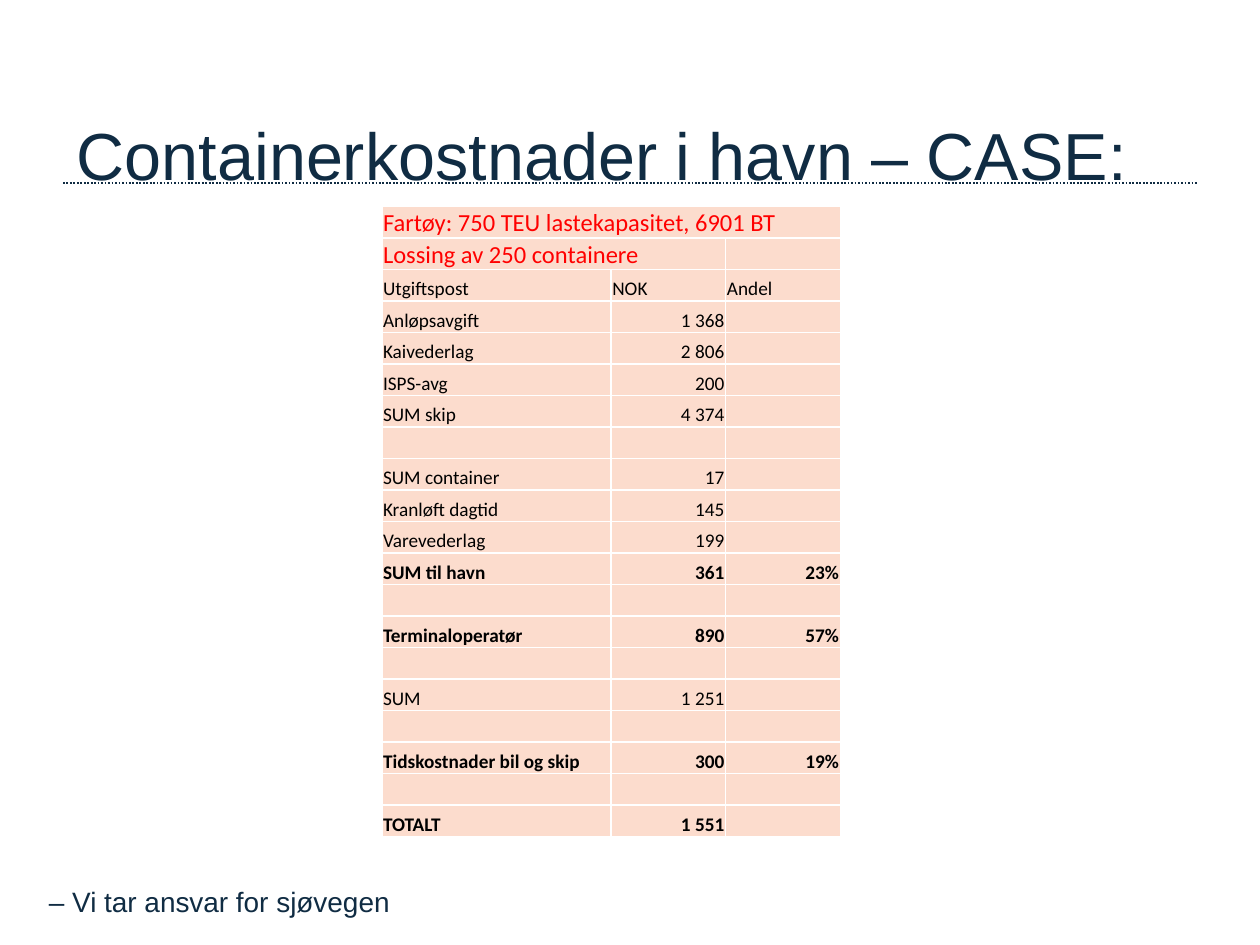
"""Build a slide with the container cost table of a port case."""
from lxml.etree import SubElement
from pptx import Presentation
from pptx.dml.color import RGBColor
from pptx.enum.dml import MSO_LINE
from pptx.enum.shapes import MSO_CONNECTOR
from pptx.enum.text import MSO_ANCHOR, MSO_AUTO_SIZE, PP_ALIGN
from pptx.oxml.ns import qn
from pptx.util import Inches, Pt

COLORS = {"navy": "102C43", "red": "FF0000", "black": "000000", "peach": "FCDCCD"}
HEADS = 2
BOLD = {"SUM til havn", "Terminaloperatør", "Tidskostnader bil og skip", "TOTALT"}
ROWS = [
    ("Fartøy: 750 TEU lastekapasitet, 6901 BT", "", ""),
    ("Lossing av 250 containere", "", ""),
    ("Utgiftspost", "NOK", "Andel"),
    ("Anløpsavgift", "1 368", ""),
    ("Kaivederlag", "2 806", ""),
    ("ISPS-avg", "200", ""),
    ("SUM skip", "4 374", ""),
    ("", "", ""),
    ("SUM container", "17", ""),
    ("Kranløft dagtid", "145", ""),
    ("Varevederlag", "199", ""),
    ("SUM til havn", "361", "23%"),
    ("", "", ""),
    ("Terminaloperatør", "890", "57%"),
    ("", "", ""),
    ("SUM", "1 251", ""),
    ("", "", ""),
    ("Tidskostnader bil og skip", "300", "19%"),
    ("", "", ""),
    ("TOTALT", "1 551", ""),
]


def paint(name):
    """Return the named colour."""
    return RGBColor.from_string(COLORS[name])


def style(para, size, color, face="Arial", bold=False):
    """Format every run of a paragraph."""
    for run in para.runs:
        font = run.font
        font.name, font.size, font.bold = face, Pt(size), bold
        font.color.rgb = paint(color)


def add_title(slide, text):
    """Fill and place the title."""
    title = slide.shapes.title
    title.left, title.top = Inches(0.51), Inches(0.6)
    title.width, title.height = Inches(9.08), Inches(1.25)
    frame = title.text_frame
    frame.text = text
    frame.word_wrap = True
    frame.auto_size = MSO_AUTO_SIZE.NONE
    frame.vertical_anchor = MSO_ANCHOR.MIDDLE
    frame.paragraphs[0].alignment = PP_ALIGN.LEFT
    style(frame.paragraphs[0], 38, "navy")


def add_rule(slide):
    """Draw the dotted line below the title."""
    rule = slide.shapes.add_connector(
        MSO_CONNECTOR.STRAIGHT, Inches(0.5), Inches(1.45), Inches(9.5), Inches(1.45))
    rule.line.color.rgb = paint("navy")
    rule.line.width = Pt(1)
    rule.line.dash_style = MSO_LINE.ROUND_DOT
    SubElement(rule._element.spPr, qn("a:effectLst"))


def add_motto(slide, text):
    """Write the motto at the foot."""
    box = slide.shapes.add_textbox(
        Inches(0.29), Inches(6.97), Inches(2.94), Inches(0.37))
    frame = box.text_frame
    frame.text = text
    frame.word_wrap = False
    frame.auto_size = MSO_AUTO_SIZE.SHAPE_TO_FIT_TEXT
    style(frame.paragraphs[0], 16, "navy")


def fill_cell(cell, text, size, color, bold, right):
    """Set the text and look of one cell."""
    cell.fill.solid()
    cell.fill.fore_color.rgb = paint("peach")
    cell.margin_left = cell.margin_right = cell.margin_top = Inches(0.01)
    cell.margin_bottom = 0
    cell.vertical_anchor = MSO_ANCHOR.BOTTOM
    para = cell.text_frame.paragraphs[0]
    para.alignment = PP_ALIGN.RIGHT if right else PP_ALIGN.LEFT
    if text:
        para.text = text
        style(para, size, color, "Calibri", bold)
    else:
        SubElement(para._p, qn("a:endParaRPr"), sz=str(size * 100))


def add_costs(slide):
    """Build the cost table."""
    frame = slide.shapes.add_table(
        len(ROWS), 3, Inches(3.03), Inches(1.64), Inches(3.64), Inches(5))
    table = frame.table
    table.first_row = table.horz_banding = False
    for col, width in zip(table.columns, (1.82, 0.91, 0.91)):
        col.width = Inches(width)
    for row, texts in enumerate(ROWS):
        table.rows[row].height = Inches(0.25)
        size, color = (14, "red") if row < HEADS else (11, "black")
        for col, text in enumerate(texts):
            fill_cell(table.cell(row, col), text, size, color,
                      texts[0] in BOLD, col > 0 and row > HEADS)
    table.cell(0, 0).merge(table.cell(0, 2))
    table.cell(1, 0).merge(table.cell(1, 1))


def main():
    """Build and save the slide."""
    deck = Presentation()
    deck.slide_width, deck.slide_height = Inches(10), Inches(7.5)
    slide = deck.slides.add_slide(deck.slide_layouts[5])
    add_rule(slide)
    add_motto(slide, "– Vi tar ansvar for sjøvegen")
    add_title(slide, "Containerkostnader i havn – CASE:")
    add_costs(slide)
    deck.save("out.pptx")


if __name__ == "__main__":
    main()
